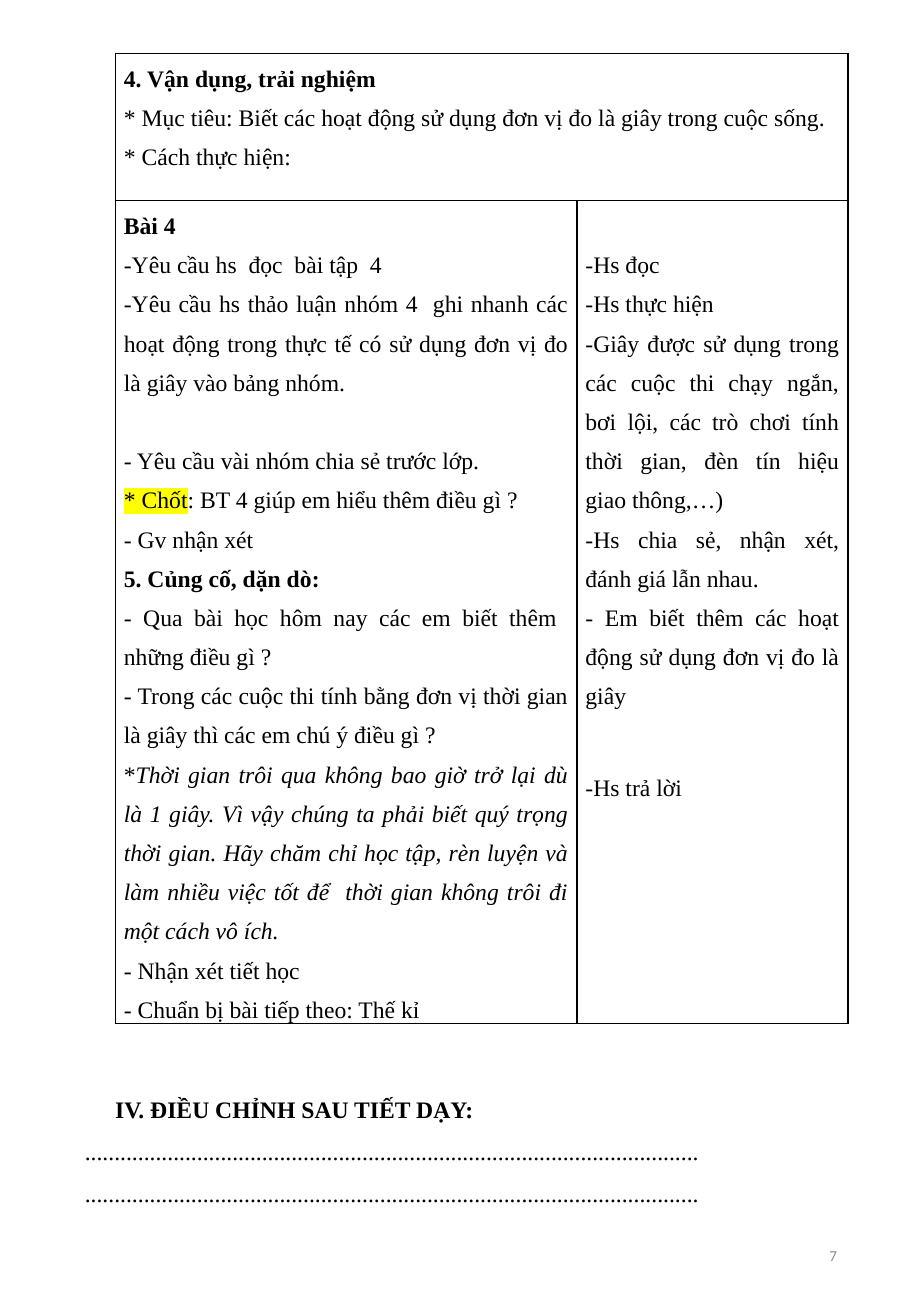
"""Lesson plan page: activity table, adjustment notes and page number."""
from lxml import etree
from pptx import Presentation, util as u
from pptx.dml.color import RGBColor
from pptx.enum import text
from pptx.oxml.ns import qn

BLACK = RGBColor(0, 0, 0)
GRAY = RGBColor(0x8C, 0x8C, 0x8C)
YELLOW = RGBColor(0xFF, 0xFF, 0)
SERIF = "Times New Roman"
LINE = 23.2
AFTER = 8
COLS = [3.8, 2.23]
ROWS = [1.21, 6.77]

INTRO = [
    [("4. Vận dụng, trải nghiệm", "b")],
    [("* Mục tiêu: Biết các hoạt động sử dụng đơn vị đo là giây trong cuộc sống.", "")],
    [("* Cách thực hiện:", "")],
]
TEACHER = [
    [("Bài 4", "b")],
    [("-Yêu cầu hs  đọc  bài tập  4", "")],
    [("-Yêu cầu hs thảo luận nhóm 4  ghi nhanh các hoạt động trong thực tế "
      "có sử dụng đơn vị đo là giây vào bảng nhóm.", "")],
    [("- Yêu cầu vài nhóm chia sẻ trước lớp.", "")],
    [("* Chốt", "h"), (": BT 4 giúp em hiểu thêm điều gì ?", "")],
    [("- Gv nhận xét", "")],
    [("5. Củng cố, dặn dò:", "b")],
    [("- Qua bài học hôm nay các em biết thêm  những điều gì ?", "")],
    [("- Trong các cuộc thi tính bằng đơn vị thời gian là giây thì các em "
      "chú ý điều gì ?", "")],
    [("*", ""),
     ("Thời gian trôi qua không bao giờ trở lại dù là 1 giây. Vì vậy chúng ta "
      "phải biết quý trọng thời gian. Hãy chăm chỉ học tập, rèn luyện và làm "
      "nhiều việc tốt để  thời gian không trôi đi một cách vô ích.", "i")],
    [("- Nhận xét tiết học", "")],
    [("- Chuẩn bị bài tiếp theo: Thế kỉ", "")],
]
PUPILS = [
    [("-Hs đọc", "")],
    [("-Hs thực hiện", "")],
    [("-Giây được sử dụng trong các cuộc thi chạy ngắn, bơi lội, các trò chơi "
      "tính thời gian, đèn tín hiệu giao thông,…)", "")],
    [("-Hs chia sẻ, nhận xét, đánh giá lẫn nhau.", "")],
    [("- Em biết thêm các hoạt động sử dụng đơn vị đo là giây", "")],
    [("-Hs trả lời", "")],
]
NOTES = [[("IV. ĐIỀU CHỈNH SAU TIẾT DẠY:", "b")], [("." * 104, "")], [("." * 104, "")]]


def write(tf, paragraphs, spacing=None):
    """Fill a text frame with justified paragraphs of (text, style) runs."""
    tf.word_wrap = True
    for i, runs in enumerate(paragraphs):
        p = tf.add_paragraph() if i else tf.paragraphs[0]
        p.alignment = text.PP_ALIGN.JUSTIFY
        p.line_spacing = spacing
        for words, style in runs:
            r = p.add_run()
            r.text = words
            r.font.name, r.font.size = SERIF, u.Pt(14)
            r.font.color.rgb = BLACK
            r.font.bold, r.font.italic = style == "b", style == "i"
            if style == "h":
                mark = etree.Element(qn("a:highlight"))
                etree.SubElement(mark, qn("a:srgbClr"), val=str(YELLOW))
                r.font._element.find(qn("a:solidFill")).addnext(mark)


def add_borders(cell):
    """Draw a thin black line on all four sides of a cell."""
    tcPr = cell._tc.get_or_add_tcPr()
    for i, side in enumerate(("a:lnL", "a:lnR", "a:lnT", "a:lnB")):
        ln = etree.Element(qn(side), w=str(u.Pt(1)))
        fill = etree.SubElement(ln, qn("a:solidFill"))
        etree.SubElement(fill, qn("a:srgbClr"), val=str(BLACK))
        tcPr.insert(i, ln)


prs = Presentation()
prs.slide_width, prs.slide_height = u.Inches(7.5), u.Inches(10.83)
s = prs.slides.add_slide(prs.slide_layouts[6])

table = s.shapes.add_table(2, 2, u.Inches(0.95), u.Inches(0.44),
                           u.Inches(sum(COLS)), u.Inches(sum(ROWS))).table
table.first_row = table.horz_banding = False
for column, width in zip(table.columns, COLS):
    column.width = u.Inches(width)
for row, height in zip(table.rows, ROWS):
    row.height = u.Inches(height)
for cell in table.iter_cells():
    cell.fill.background()
    add_borders(cell)
    cell.margin_left = cell.margin_right = u.Inches(0.07)
    cell.margin_top = cell.margin_bottom = 0

table.cell(0, 0).merge(table.cell(0, 1))
intro, teacher, pupils = table.cell(0, 0), table.cell(1, 0), table.cell(1, 1)
for cell, paragraphs in ((intro, INTRO), (teacher, TEACHER), (pupils, PUPILS)):
    write(cell.text_frame, paragraphs, 1.5)
pupils.margin_top = u.Pt(LINE)
teacher.text_frame.paragraphs[3].space_before = u.Pt(LINE)
pupils.text_frame.paragraphs[-1].space_before = u.Pt(LINE + AFTER)

tf = s.shapes.add_textbox(u.Inches(0.6), u.Inches(8.96), u.Inches(6.74), u.Inches(1.03)).text_frame
write(tf, NOTES)
for p in tf.paragraphs[:2]:
    p.space_after = u.Pt(AFTER)
tf.paragraphs[0]._p.get_or_add_pPr().set("indent", str(u.Inches(0.25)))
tf.paragraphs[-1].alignment = text.PP_ALIGN.LEFT

tf = s.shapes.add_textbox(u.Inches(5.3), u.Inches(10.04), u.Inches(1.69), u.Inches(0.58)).text_frame
tf.text = "7"
tf.word_wrap = True
tf.vertical_anchor = text.MSO_ANCHOR.MIDDLE
p = tf.paragraphs[0]
p.alignment = text.PP_ALIGN.RIGHT
r = p.runs[0]
r.font.name, r.font.size = "Calibri", u.Pt(9)
r.font.color.rgb = GRAY

prs.save("out.pptx")
